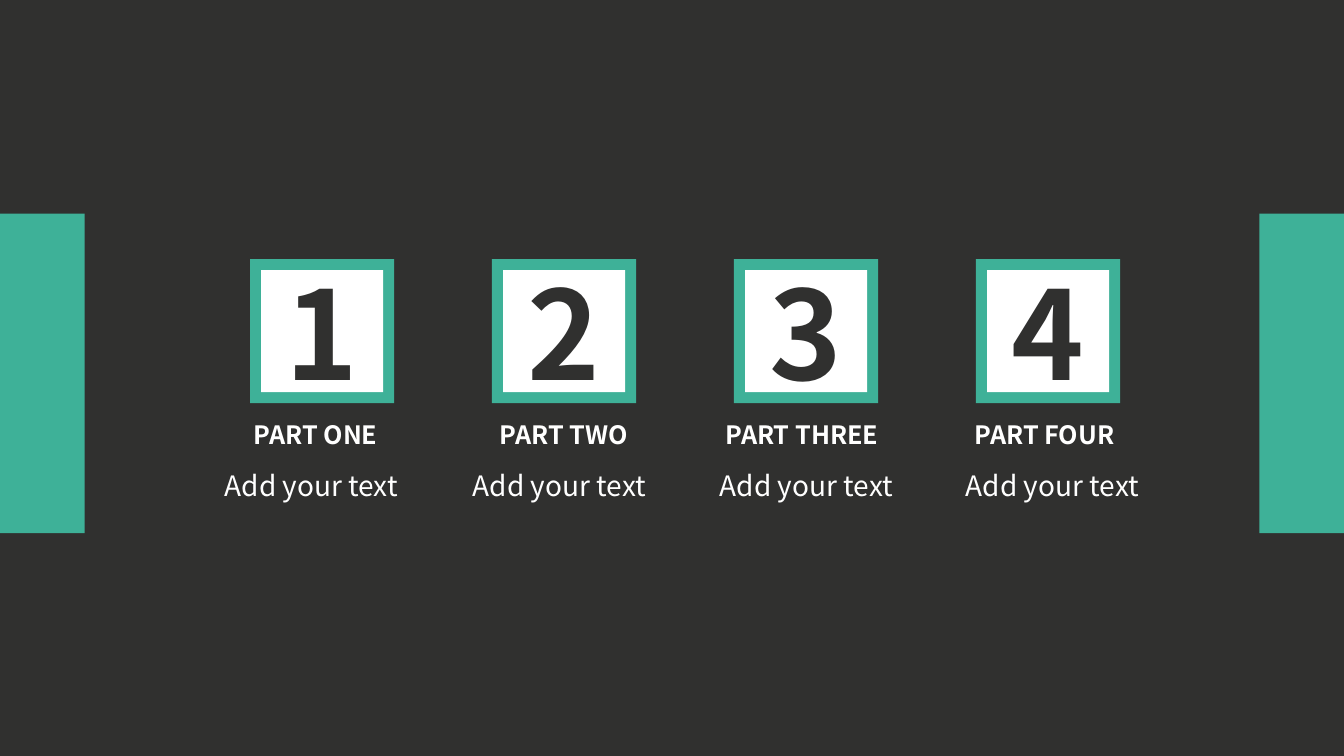
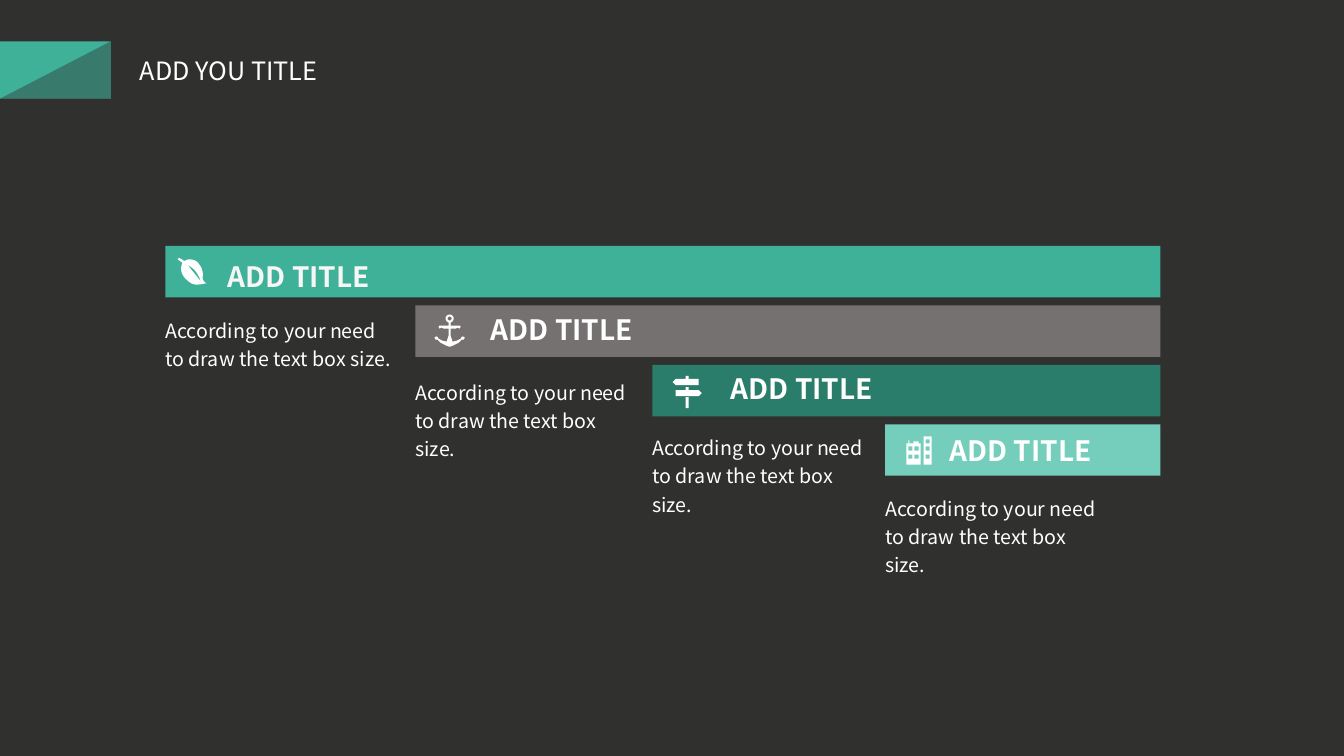
import math
from dataclasses import dataclass

import lxml.etree
import pptx
import pptx.dml.color
import pptx.enum.shapes
import pptx.enum.text
import pptx.oxml.ns
import pptx.util

Inches = pptx.util.Inches
SHAPE = pptx.enum.shapes.MSO_SHAPE
ALIGN = pptx.enum.text.PP_ALIGN
ANCHOR = pptx.enum.text.MSO_ANCHOR


@dataclass(frozen=True)
class Theme:
    font: str = "Noto Sans CJK JP"
    dark: str = "30302F"
    green: str = "3EB198"
    gray: str = "767171"
    deep_green: str = "2B7D6B"
    pale_green: str = "74CEBB"
    white: str = "FFFFFF"
    off_white: str = "F6F6F6"
    number_size: int = 88
    heading_size: int = 20
    title_size: int = 18
    body_size: int = 14


class Painter:
    """Holds the theme, the deck and the current page."""

    def __init__(self, theme):
        self.theme = theme
        self.deck = pptx.Presentation()
        self.deck.slide_width = Inches(13.33)
        self.deck.slide_height = Inches(7.5)
        self.page = None

    def new_page(self):
        self.page = self.deck.slides.add_slide(self.deck.slide_layouts[6])
        self.paint(self.page.background.fill, self.theme.dark)

    def paint(self, fill, color):
        fill.solid()
        fill.fore_color.rgb = pptx.dml.color.RGBColor.from_string(color)

    def finish(self, shape, color):
        self.paint(shape.fill, color)
        shape.line.fill.background()
        shape.shadow.inherit = False
        return shape

    def block(self, left, top, width, height, color, kind=SHAPE.RECTANGLE):
        shape = self.page.shapes.add_shape(
            kind, Inches(left), Inches(top), Inches(width), Inches(height))
        return self.finish(shape, color)

    def set_text(self, shape, text, size, color, bold=False,
                 align=ALIGN.LEFT):
        shape.text_frame.text = text
        para = shape.text_frame.paragraphs[0]
        para.alignment = align
        for span in para.runs:
            span.font.name = self.theme.font
            span.font.size = pptx.util.Pt(size)
            span.font.bold = bold
            span.font.color.rgb = pptx.dml.color.RGBColor.from_string(color)
        return para

    def label(self, left, top, width, text, size, color=None, bold=False):
        box = self.page.shapes.add_textbox(
            Inches(left), Inches(top), Inches(width), Inches(0.42))
        box.text_frame.word_wrap = False
        self.set_text(box, text, size, color or self.theme.white, bold)

    def body(self, left, top, width, text):
        box = self.page.shapes.add_textbox(
            Inches(left), Inches(top), Inches(width), Inches(0.56))
        frame = box.text_frame
        frame.word_wrap = True
        frame.margin_left = frame.margin_right = 0
        frame.margin_top = frame.margin_bottom = 0
        para = self.set_text(box, text, self.theme.body_size,
                             self.theme.white)
        para.line_spacing = 1.2

    def icon(self, contours):
        """Draw closed contours as one shape; inner contours become holes."""
        points = [[(Inches(x), Inches(y)) for x, y in contour]
                  for contour in contours]
        builder = self.page.shapes.build_freeform(*points[0][0], scale=1.0)
        for index, contour in enumerate(points):
            if index:
                builder.move_to(*contour[0])
            builder.add_line_segments(contour[1:], close=True)
        self.finish(builder.convert_to_shape(), self.theme.white)

    def header(self, text):
        self.block(0, 0.41, 1.1, 0.57, self.theme.green)
        shade = self.block(0, 0.41, 1.1, 0.57, self.theme.dark,
                           SHAPE.RIGHT_TRIANGLE)
        shade._element.spPr.xfrm.set("flipH", "1")
        color = shade._element.spPr.find(".//" + pptx.oxml.ns.qn("a:srgbClr"))
        lxml.etree.SubElement(color, pptx.oxml.ns.qn("a:alpha"), val="42000")
        self.label(1.29, 0.5, 2.1, text, self.theme.title_size)


# Outline helpers
def rectangle(left, top, right, bottom):
    return [(left, top), (right, top), (right, bottom), (left, bottom)]


def circle(x, y, radius, steps=24):
    angles = [2 * math.pi * step / steps for step in range(steps)]
    return [(x + radius * math.cos(a), y + radius * math.sin(a))
            for a in angles]


def curve(knots, steps=8):
    """Sample a chain of cubic curves: a start, then three points for each."""
    points = [knots[0]]
    for first in range(0, len(knots) - 1, 3):
        a, b, c, d = knots[first:first + 4]
        for step in range(1, steps + 1):
            t = step / steps
            u = 1 - t
            points.append(tuple(
                u**3 * a[k] + 3 * u * u * t * b[k] + 3 * u * t * t * c[k]
                + t**3 * d[k] for k in (0, 1)))
    return points


# Icon outlines
def leaf():
    blade = curve([(2.01, 2.75), (2.02, 2.71), (2, 2.65), (1.98, 2.63),
                   (1.95, 2.57), (1.87, 2.56), (1.83, 2.59)])
    stem = [(1.78, 2.56), (1.76, 2.57)]
    belly = curve([(1.81, 2.61), (1.81, 2.61), (1.75, 2.71), (1.88, 2.8),
                   (1.93, 2.84), (1.99, 2.82), (2.05, 2.81),
                   (2.05, 2.81), (2.01, 2.8), (2.01, 2.75)])
    vein = curve([(1.99, 2.79), (1.99, 2.79), (1.95, 2.74), (1.91, 2.69),
                  (1.87, 2.64), (1.86, 2.63), (1.86, 2.63),
                  (1.86, 2.63), (1.89, 2.64), (1.93, 2.68),
                  (1.96, 2.71), (1.99, 2.78), (1.99, 2.79)])
    return [blade + stem + belly, vein]


def anchor(center=4.46):
    half = [(0.01, 3.2), (0.01, 3.23), (0.1, 3.23), (0.11, 3.24),
            (0.1, 3.26), (0.08, 3.25), (0.06, 3.26), (0.01, 3.26),
            (0.01, 3.33), (0.03, 3.39), (0.07, 3.38), (0.11, 3.36),
            (0.12, 3.34), (0.14, 3.34), (0.15, 3.35), (0.14, 3.37),
            (0.12, 3.37), (0.09, 3.4), (0.03, 3.43), (0, 3.44)]
    right = [(center + x, y) for x, y in half]
    left = [(center - x, y) for x, y in reversed(half)]
    return [right + left, circle(center, 3.16, 0.04),
            circle(center, 3.16, 0.02)]


def signpost():
    upper = [(6.8, 3.73), (6.83, 3.73), (6.83, 3.76), (6.93, 3.76),
             (6.93, 3.82), (6.7, 3.82), (6.67, 3.79), (6.7, 3.76),
             (6.8, 3.76)]
    lower = [(6.8, 3.84), (6.83, 3.84), (6.83, 3.87), (6.93, 3.87),
             (6.96, 3.9), (6.93, 3.93), (6.7, 3.93), (6.7, 3.87),
             (6.8, 3.87)]
    return [upper, lower, rectangle(6.8, 3.94, 6.83, 4.05)]


def buildings():
    tower = rectangle(9.16, 4.33, 9.24, 4.61)
    house = [(9.11, 4.38), (9.06, 4.38), (9.06, 4.4), (9.02, 4.4),
             (9.02, 4.37), (9.01, 4.37), (9.01, 4.4), (8.99, 4.4),
             (8.99, 4.61), (9.13, 4.61), (9.13, 4.4), (9.11, 4.4)]
    corners = [(9.18, top) for top in (4.36, 4.43, 4.51)]
    corners += [(x, top) for x in (9.01, 9.07) for top in (4.43, 4.51)]
    return [tower, house] + [rectangle(x, y, x + 0.04, y + 0.04)
                             for x, y in corners]


# Slide 1: contents
def contents_page(painter):
    theme = painter.theme
    painter.new_page()
    for left in (0, 12.49):
        painter.block(left, 2.12, 0.84, 3.17, theme.green)

    # name, left and width of the name, left of the text
    parts = [("PART ONE", 2.42, 1.49, 2.13),
             ("PART TWO", 4.86, 1.53, 4.59),
             ("PART THREE", 7.1, 1.8, 7.04),
             ("PART FOUR", 9.57, 1.66, 9.48)]
    frame_size, border = 1.43, 0.11
    tile_size = frame_size - 2 * border
    for index, (name, name_left, name_width, text_left) in enumerate(parts):
        left, top = 2.48 + 2.4 * index, 2.57
        painter.block(left, top, frame_size, frame_size, theme.green)
        tile = painter.block(left + border, top + border,
                             tile_size, tile_size, theme.white)
        tile.text_frame.vertical_anchor = ANCHOR.MIDDLE
        painter.set_text(tile, str(index + 1), theme.number_size, theme.dark,
                         True, ALIGN.CENTER)
        painter.label(name_left, 4.11, name_width, name,
                      theme.title_size, bold=True)
        painter.label(text_left, 4.6, 2.05, "Add your text",
                      theme.heading_size)


# Slide 2: stepped bars
def steps_page(painter):
    theme = painter.theme
    painter.new_page()
    painter.header("ADD YOU TITLE")

    # bar left, bar color, title left, top and color, body top and width, icon
    steps = [
        (1.64, theme.green, 2.16, 2.52, theme.off_white, 3.12, 2.3, leaf),
        (4.12, theme.gray, 4.77, 3.05, theme.white, 3.73, 2.14, anchor),
        (6.47, theme.deep_green, 7.15, 3.64, theme.white, 4.28, 2.13,
         signpost),
        (8.78, theme.pale_green, 9.32, 4.25, theme.white, 4.88, 2.15,
         buildings),
    ]
    bar_right = 11.51
    for index, (left, color, title_left, title_top, title_color,
                body_top, body_width, outline) in enumerate(steps):
        painter.block(left, 2.44 + 0.59 * index, bar_right - left, 0.51, color)
        painter.label(title_left, title_top, 1.67, "ADD TITLE",
                      theme.heading_size, title_color, True)
        painter.icon(outline())
        painter.body(left, body_top, body_width,
                     "According to your need to draw the text box size.")


def main():
    painter = Painter(Theme())
    contents_page(painter)
    steps_page(painter)
    painter.deck.save("out.pptx")


if __name__ == "__main__":
    main()
